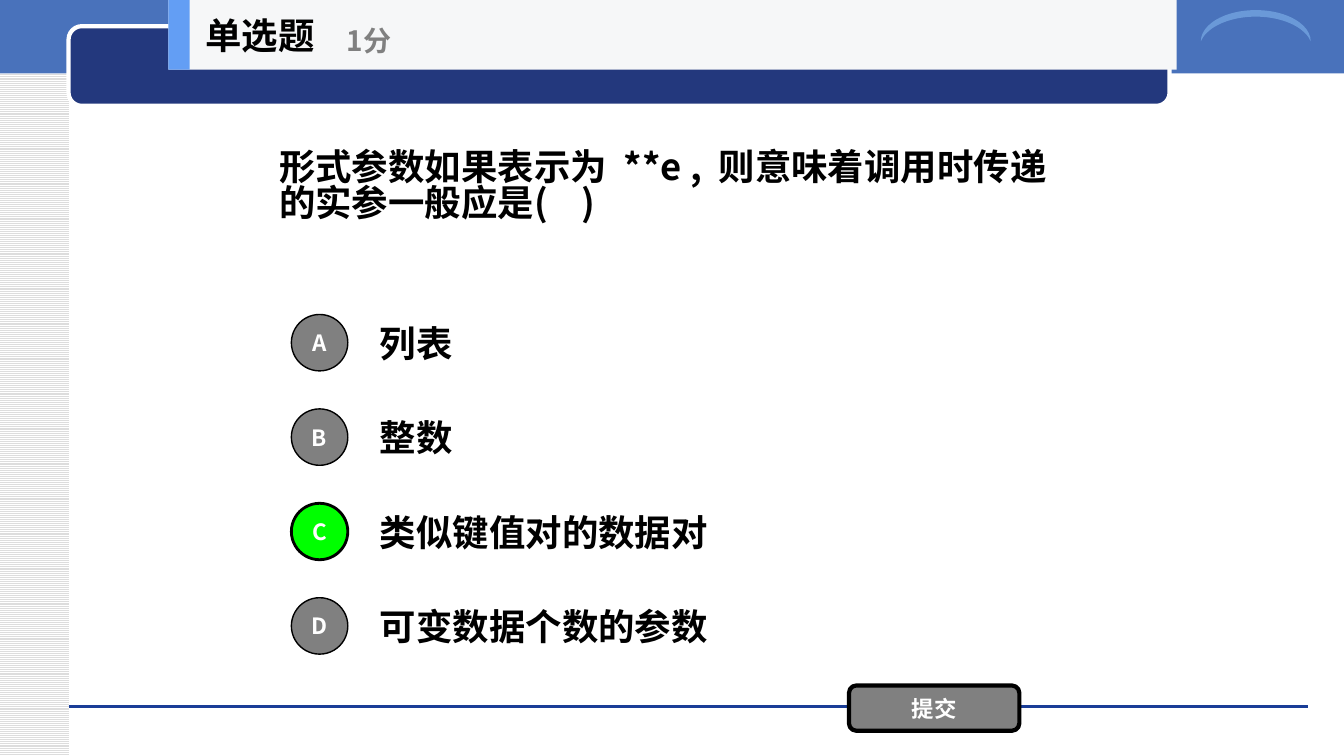
from lxml import etree
from pptx import Presentation
from pptx import util as u
from pptx.dml.color import RGBColor
from pptx.enum import dml, shapes, text
from pptx.oxml import ns

FONT = "Noto Sans CJK SC"
BLACK = RGBColor(0x00, 0x00, 0x00)
WHITE = RGBColor(0xFF, 0xFF, 0xFF)
GRAY = RGBColor(0x80, 0x80, 0x80)
GREEN = RGBColor(0x00, 0xFF, 0x00)
STRIPE = RGBColor(0xDD, 0xDD, 0xDD)
BAND = RGBColor(0x49, 0x72, 0xBB)
NAVY = RGBColor(0x23, 0x38, 0x7D)
RULE = RGBColor(0x1A, 0x3D, 0x97)
MOON = RGBColor(0x6A, 0x99, 0xD8)
PALE = RGBColor(0xF6, 0xF7, 0xF8)
ACCENT = RGBColor(0x63, 0x9E, 0xF4)

KIND = shapes.MSO_SHAPE
ALIGN = text.PP_ALIGN

QUERY = "形式参数如果表示为  **e ,  则意味着调用时传递的实参一般应是(    )"
CHOICES = ["列表", "整数", "类似键值对的数据对", "可变数据个数的参数"]
ANSWER = "C"


def inches(*vals):
    return [u.Inches(val) for val in vals]


def write(shape, words, size=26, color=BLACK, align=ALIGN.LEFT, space=None):
    """Put bold text in a shape, centred vertically."""
    frame = shape.text_frame
    frame.word_wrap = True
    frame.vertical_anchor = text.MSO_ANCHOR.MIDDLE
    para = frame.paragraphs[0]
    para.alignment = align
    if space:
        para.line_spacing = space
    run = para.add_run()
    run.text = words
    font = run.font
    font.name, font.size, font.bold = FONT, u.Pt(size), True
    font.color.rgb = color
    # East Asian typeface
    east = etree.SubElement(run._r.get_or_add_rPr(), ns.qn("a:ea"))
    east.set("typeface", FONT)


def label(slide, box, words, **style):
    write(slide.shapes.add_textbox(*inches(*box)), words, **style)


def block(slide, kind, box, fill, line=None, width=1):
    shape = slide.shapes.add_shape(kind, *inches(*box))
    shape.shadow.inherit = False
    shape.fill.solid()
    shape.fill.fore_color.rgb = fill
    if line is None:
        shape.line.fill.background()
    else:
        shape.line.color.rgb = line
        shape.line.width = u.Pt(width)
    return shape


def button(slide, kind, box, words, fill=GRAY, width=1):
    shape = block(slide, kind, box, fill, BLACK, width)
    shape.text_frame.margin_left = shape.text_frame.margin_right = 0
    write(shape, words, size=16, color=WHITE, align=ALIGN.CENTER)


def rule(slide, ends, color):
    line = slide.shapes.add_connector(
        shapes.MSO_CONNECTOR.STRAIGHT, *inches(*ends))
    line.line.color.rgb = color
    line.line.width = u.Pt(0)
    etree.SubElement(line._element.spPr, ns.qn("a:effectLst"))


def backdrop(slide):
    # Striped side and top band
    side = block(slide, KIND.RECTANGLE, (0, 0, 0.68, 7.5), WHITE)
    side.fill.patterned()
    side.fill.pattern = dml.MSO_PATTERN.LIGHT_HORIZONTAL
    side.fill.fore_color.rgb = STRIPE
    side.fill.back_color.rgb = WHITE
    block(slide, KIND.RECTANGLE, (0, -0.03, 13.33, 0.76), BAND)

    # Foot rule, title plate and arc
    rule(slide, (0.68, 7.01, 12.97, 7.01), RULE)
    block(slide, KIND.ROUNDED_RECTANGLE, (0.68, 0.26, 10.92, 0.79),
          NAVY, WHITE, 3)
    arc = block(slide, KIND.MOON, (12.3, -0.29, 0.31, 1.09), MOON)
    arc.adjustments[0] = 0.21
    arc.rotation = 90


def header(slide):
    block(slide, KIND.RECTANGLE, (1.67, 0, 10, 0.69), PALE)
    block(slide, KIND.RECTANGLE, (1.67, 0, 0.21, 0.69), ACCENT)
    label(slide, (1.94, 0, 2.08, 0.69), "单选题")
    label(slide, (3.34, 0.12, 2.5, 0.56), "1分", size=20, color=GRAY)


def options(slide):
    for row, words in enumerate(CHOICES):
        top = 3.05 + row * 2.81 / 3
        mark = "ABCD"[row]
        right = mark == ANSWER
        label(slide, (3.67, top, 7, 0.7), words)
        button(slide, KIND.OVAL, (2.89, top + 0.07, 0.56, 0.56), mark,
               fill=GREEN if right else GRAY, width=2 if right else 1)


def main():
    deck = Presentation()
    deck.slide_width, deck.slide_height = inches(13.33, 7.5)
    slide = deck.slides.add_slide(deck.slide_layouts[6])
    backdrop(slide)
    label(slide, (2.67, 0.69, 8, 2.34), QUERY, space=0.83)
    options(slide)
    button(slide, KIND.ROUNDED_RECTANGLE, (8.42, 6.8, 1.69, 0.45), "提交",
           width=3)
    header(slide)
    deck.save("out.pptx")


if __name__ == "__main__":
    main()
